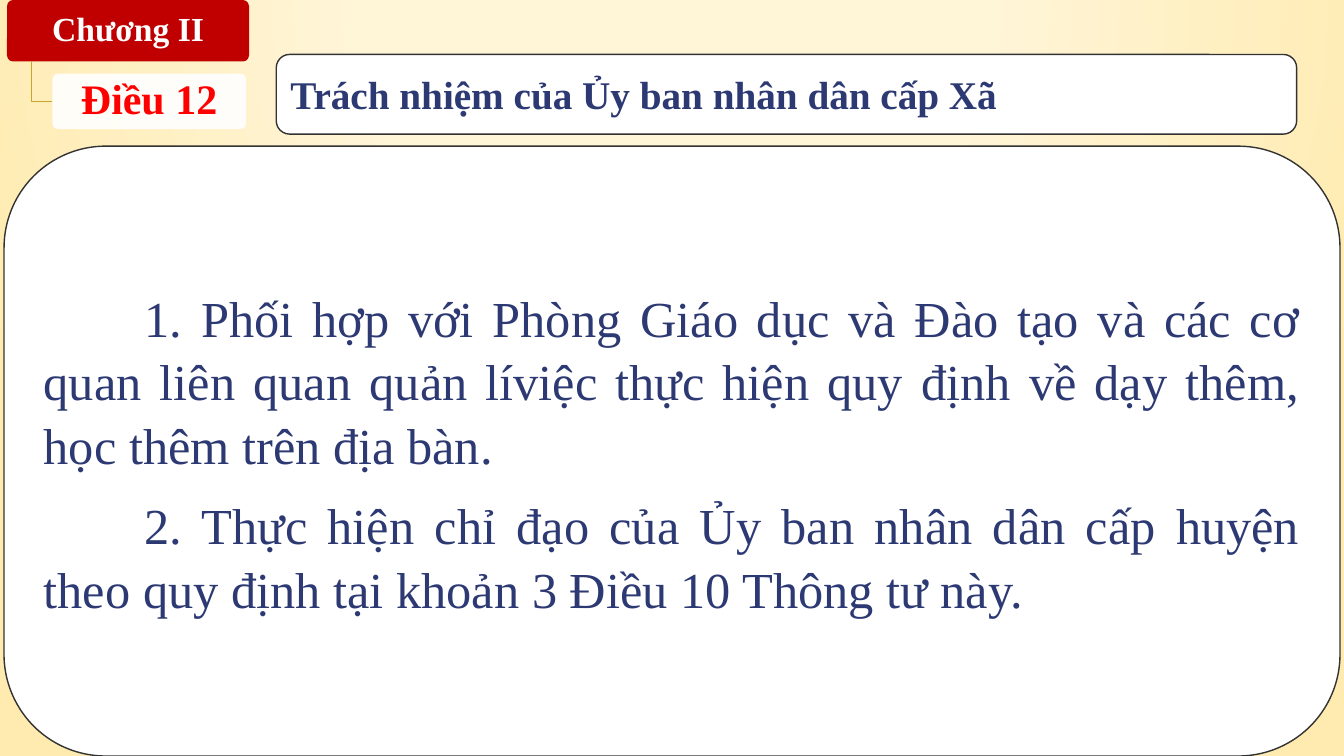
from lxml.etree import SubElement
from pptx import Presentation
from pptx.dml.color import RGBColor
from pptx.enum.shapes import MSO_SHAPE
from pptx.enum.text import MSO_ANCHOR, PP_ALIGN
from pptx.oxml.ns import qn
from pptx.util import Inches, Pt

FONT = "Times New Roman"
NAVY = "2C3973"


def rgb(value):
    return RGBColor.from_string(value)


def write(tf, lines, font, para, inset=(0.1, 0.05)):
    tf.word_wrap = True
    tf.vertical_anchor = MSO_ANCHOR.MIDDLE
    tf.margin_left = tf.margin_right = Inches(inset[0])
    tf.margin_top = tf.margin_bottom = Inches(inset[1])
    for i, line in enumerate(lines):
        p = tf.add_paragraph() if i else tf.paragraphs[0]
        for name, value in para.items():
            setattr(p, name, value)
        r = p.add_run()
        r.text = line
        r.font.name = FONT
        r.font.color.rgb = rgb(font["color"])
        r.font.size = Pt(font["size"])
        r.font.bold = font["bold"]


prs = Presentation()
prs.slide_width, prs.slide_height = Inches(13.33), Inches(7.5)
s = prs.slides.add_slide(prs.slide_layouts[5])

s.background.fill.gradient()
grad = s._element.find(".//" + qn("a:gradFill"))
for child in list(grad):
    grad.remove(child)
stops = SubElement(grad, qn("a:gsLst"))
for pos, color, alpha in [(0, "FFF5D7", 59), (40, "FFF5D7", 66), (100, "FFEBAF", 100)]:
    gs = SubElement(stops, qn("a:gs"), pos=str(pos * 1000))
    clr = SubElement(gs, qn("a:srgbClr"), val=color)
    if alpha < 100:
        SubElement(clr, qn("a:alpha"), val=str(alpha * 1000))
glow = SubElement(grad, qn("a:path"), {"path": "circle"})
SubElement(glow, qn("a:fillToRect"), l="50000", t="-80000", r="50000", b="180000")

boxes = {}
for name, place, adj, fill, line in [
    ("chapter", (0.07, 0, 2.4, 0.61), 0.1, "C00000", None),
    ("article", (0.52, 0.73, 1.92, 0.55), 0.1, "FFFFFF", None),
    ("body", (0.04, 1.45, 13.25, 6.05), 0.1667, "FFFFFF", "323232"),
    ("heading", (2.74, 0.54, 10.12, 0.79), 0.1667, "FFFFFF", "323232"),
]:
    sp = s.shapes.add_shape(MSO_SHAPE.ROUNDED_RECTANGLE, *map(Inches, place))
    sp.shadow.inherit = False
    sp.adjustments[0] = adj
    sp.fill.solid()
    sp.fill.fore_color.rgb = rgb(fill)
    if line:
        sp.line.color.rgb = rgb(line)
        sp.line.width = Pt(1)
    else:
        sp.line.fill.background()
    boxes[name] = sp

article_fill = boxes["article"]._element.spPr.find(qn("a:solidFill"))
SubElement(article_fill[0], qn("a:alpha"), val="90000")

fb = s.shapes.build_freeform(Inches(0.31), Inches(0.61))
fb.add_line_segments([(Inches(0.31), Inches(1.01)), (Inches(0.52), Inches(1.01))], close=False)
elbow = fb.convert_to_shape()
elbow.shadow.inherit = False
elbow.fill.background()
elbow.line.color.rgb = rgb("CCA42B")
elbow.line.width = Pt(1)

label = {"alignment": PP_ALIGN.CENTER, "line_spacing": 0.9}
write(boxes["chapter"].text_frame, ["Chương II"],
      {"size": 24, "color": "FFFFFF", "bold": True}, label, (0.05, 0.03))
write(boxes["article"].text_frame, ["Điều 12"],
      {"size": 30, "color": "FF0000", "bold": True}, label, (0.06, 0.04))

body = boxes["body"].text_frame
write(body, [
    "1. Phối hợp với Phòng Giáo dục và Đào tạo và các cơ quan liên quan quản líviệc "
    "thực hiện quy định về dạy thêm, học thêm trên địa bàn.",
    "2. Thực hiện chỉ đạo của Ủy ban nhân dân cấp huyện theo quy định tại khoản 3 "
    "Điều 10 Thông tư này.",
], {"size": 36, "color": NAVY, "bold": False}, {
    "alignment": PP_ALIGN.JUSTIFY, "line_spacing": 1.05,
    "space_before": Pt(6), "space_after": Pt(6),
})
for p in body.paragraphs:
    p._p.get_or_add_pPr().set("indent", str(Inches(1)))

title = s.shapes.title
title.left, title.top, title.width, title.height = map(Inches, (2.78, 0.58, 10.04, 0.71))
write(title.text_frame, ["Trách nhiệm của Ủy ban nhân dân cấp Xã"],
      {"size": 28, "color": NAVY, "bold": True}, {"alignment": PP_ALIGN.LEFT})
s.shapes._spTree.append(title._element)

prs.save("out.pptx")
